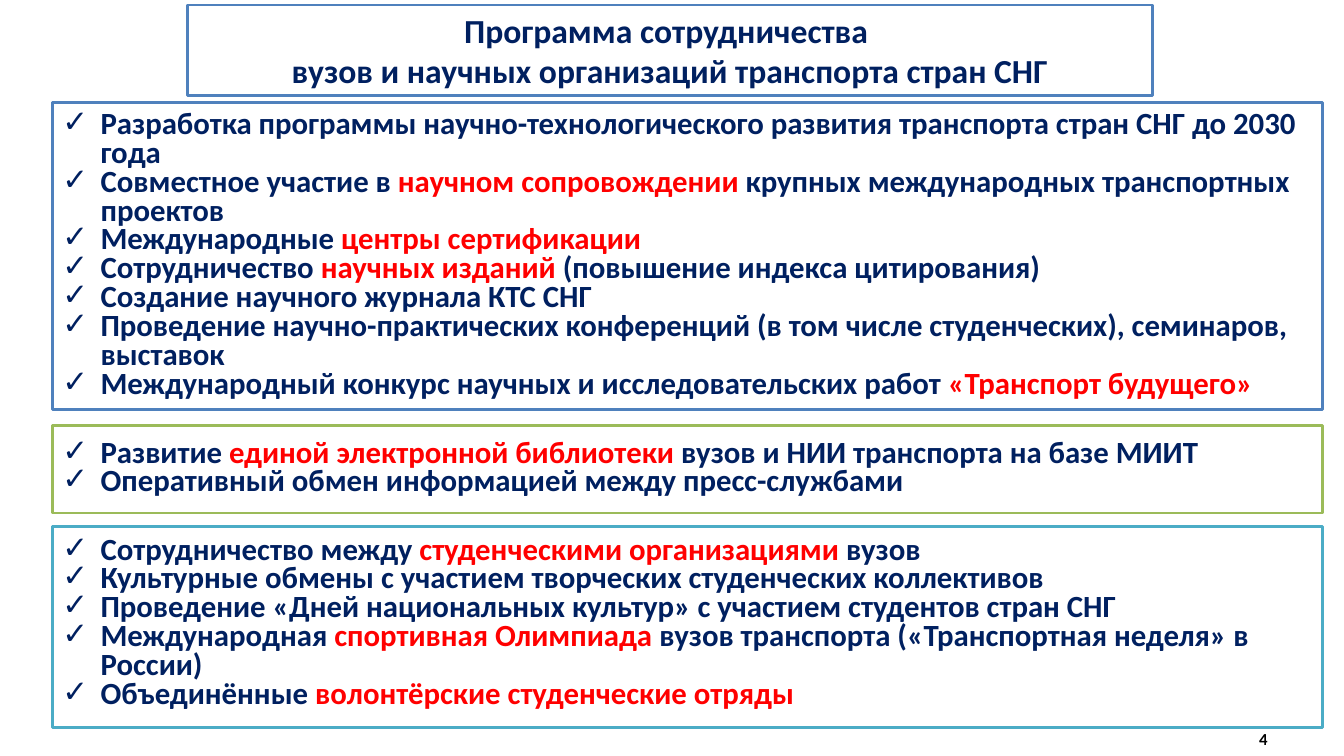
from lxml.etree import SubElement
from pptx import Presentation
from pptx.dml.color import RGBColor
from pptx.enum.shapes import MSO_SHAPE
from pptx.enum.text import MSO_ANCHOR, PP_ALIGN
from pptx.oxml.ns import qn
from pptx.util import Inches, Pt

NAVY, RED = "002060", "FF0000"
TITLE = ["Программа сотрудничества ",
         "вузов и научных организаций транспорта стран СНГ"]
SCIENCE = [
    "Разработка программы научно-технологического развития транспорта стран СНГ до 2030 года",
    "Совместное участие в |научном сопровождении| крупных международных транспортных проектов",
    "Международные |центры сертификации",
    "Сотрудничество |научных изданий |(повышение индекса цитирования)",
    "Создание научного журнала КТС СНГ",
    "Проведение научно-практических конференций (в том числе студенческих), семинаров, выставок",
    "Международный конкурс научных и исследовательских работ |«Транспорт будущего»",
]
LIBRARY = [
    "Развитие |единой электронной библиотеки |вузов и НИИ транспорта на базе МИИТ",
    "Оперативный обмен информацией между пресс-службами",
]
STUDENTS = [
    "Сотрудничество между |студенческими организациями |вузов",
    "Культурные обмены с участием творческих студенческих коллективов",
    "Проведение «Дней национальных культур» с участием студентов стран СНГ",
    "Международная |спортивная Олимпиада |вузов транспорта («Транспортная неделя» в России)",
    "Объединённые |волонтёрские студенческие отряды",
]


def color(code):
    return RGBColor.from_string(code)


def add_run(para, text, size, code):
    run = para.add_run()
    run.text = text
    run.font.name = "Calibri"
    run.font.size = Pt(size)
    run.font.bold = True
    run.font.color.rgb = color(code)


def add_paras(frame, count):
    for _ in range(count - 1):
        frame.add_paragraph()
    return frame.paragraphs


def add_frame(slide, box, edge):
    rect = slide.shapes.add_shape(MSO_SHAPE.RECTANGLE, *map(Inches, box))
    rect.shadow.inherit = False
    rect.fill.solid()
    rect.fill.fore_color.rgb = color("FFFFFF")
    rect.line.color.rgb = color(edge)
    rect.line.width = Pt(2)
    frame = rect.text_frame
    frame.word_wrap = True
    frame.vertical_anchor = MSO_ANCHOR.MIDDLE
    return frame


def add_title(slide, box):
    frame = add_frame(slide, box, "4F81BD")
    frame.margin_left = frame.margin_right = Inches(0.06)
    frame.margin_top = frame.margin_bottom = Inches(0.03)
    for para, text in zip(add_paras(frame, len(TITLE)), TITLE):
        para.alignment = PP_ALIGN.CENTER
        add_run(para, text, 24, NAVY)


def add_check(para):
    props = para._p.get_or_add_pPr()
    props.set("marL", str(Inches(0.38)))
    props.set("indent", str(-Inches(0.38)))
    SubElement(props, qn("a:buFont")).set("typeface", "Calibri")
    SubElement(props, qn("a:buChar")).set("char", "✓")


def add_list(slide, box, edge, items, foot=0.05):
    frame = add_frame(slide, box, edge)
    frame.margin_bottom = Inches(foot)
    for para, item in zip(add_paras(frame, len(items)), items):
        para.alignment = PP_ALIGN.LEFT
        para.line_spacing = Pt(20.6)
        add_check(para)
        for i, part in enumerate(item.split("|")):
            add_run(para, part, 22, RED if i % 2 else NAVY)


def add_number(slide, box):
    frame = slide.shapes.add_textbox(*map(Inches, box)).text_frame
    frame.word_wrap = True
    frame.vertical_anchor = MSO_ANCHOR.MIDDLE
    para = frame.paragraphs[0]
    para.alignment = PP_ALIGN.RIGHT
    add_run(para, "4", 12, "000000")


def main():
    deck = Presentation()
    deck.slide_width, deck.slide_height = Inches(13.33), Inches(7.5)
    slide = deck.slides.add_slide(deck.slide_layouts[6])
    left, width = 0.52, 12.6
    add_title(slide, (1.86, 0.05, 9.57, 0.9))
    add_list(slide, (left, 1.02, width, 3.04), "4F81BD", SCIENCE)
    add_list(slide, (left, 4.22, width, 0.87), "9BBB59", LIBRARY)
    add_list(slide, (left, 5.22, width, 2), "4BACC6", STUDENTS, foot=0.11)
    add_number(slide, (9.56, 7.13, 3.11, 0.4))
    deck.save("out.pptx")


if __name__ == "__main__":
    main()
